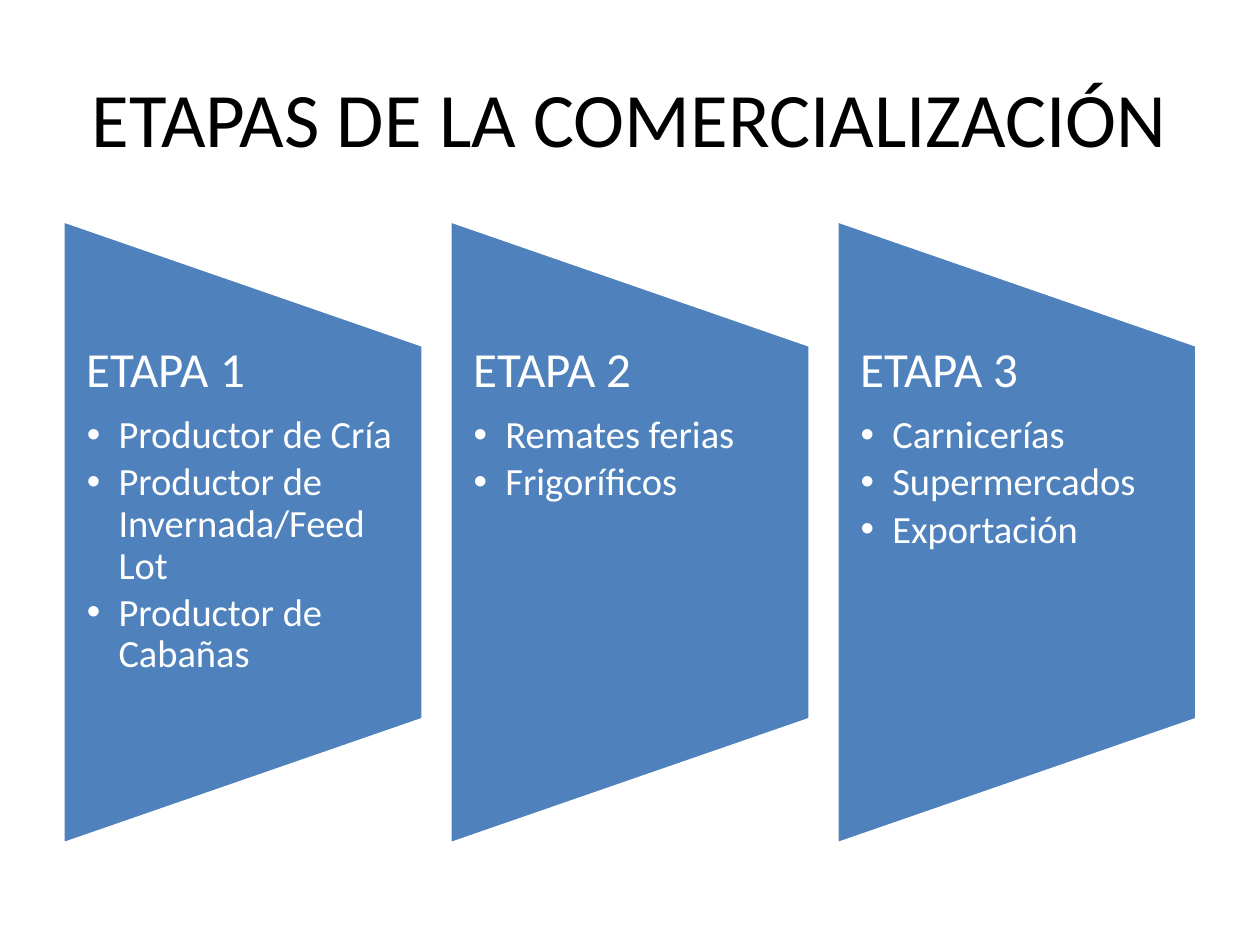
import dataclasses

import lxml.etree
import pptx
import pptx.dml.color
import pptx.enum.shapes
import pptx.enum.text
import pptx.oxml.ns
import pptx.util

Cm = pptx.util.Cm
Pt = pptx.util.Pt

FONT = "Calibri"
LEFT, CENTER_Y, PITCH = 1.27, 10.73, 7.8
PANEL_WIDTH, PANEL_HEIGHT, TEXT_HEIGHT = 7.26, 12.57, 7.54
INSET, INDENT = 0.48, 0.64


@dataclasses.dataclass
class Stage:
    heading: str
    items: list[str]


STAGES = [
    Stage("ETAPA 1", ["Productor de Cría", "Productor de Invernada/Feed Lot",
                      "Productor de Cabañas"]),
    Stage("ETAPA 2", ["Remates ferias", "Frigoríficos"]),
    Stage("ETAPA 3", ["Carnicerías", "Supermercados", "Exportación"]),
]


def rgb(value: str) -> pptx.dml.color.RGBColor:
    return pptx.dml.color.RGBColor.from_string(value)


def write(p, text: str, *, size: float, color: str = "FFFFFF",
          align=pptx.enum.text.PP_ALIGN.LEFT, spacing: float = 0.9,
          after: float = 0, bullet: bool = False) -> None:
    p.alignment = align
    p.line_spacing = spacing
    p.space_before = Pt(0)
    p.space_after = Pt(after)
    r = p.add_run()
    r.text = text
    r.font.name = FONT
    r.font.size = Pt(size)
    r.font.color.rgb = rgb(color)
    if bullet:
        p.level = 1
        pPr = p._p.get_or_add_pPr()
        pPr.set("marL", str(Cm(INDENT)))
        pPr.set("indent", str(-Cm(INDENT)))
        qn = pptx.oxml.ns.qn
        lxml.etree.SubElement(pPr, qn("a:buFont"), typeface="Arial")
        lxml.etree.SubElement(pPr, qn("a:buChar"), char="•")


def add_panel(s, left: float) -> None:
    sp = s.shapes.add_shape(
        pptx.enum.shapes.MSO_SHAPE.FLOWCHART_MANUAL_OPERATION,
        Cm(left + (PANEL_WIDTH - PANEL_HEIGHT) / 2),
        Cm(CENTER_Y - PANEL_WIDTH / 2), Cm(PANEL_HEIGHT), Cm(PANEL_WIDTH))
    sp.rotation = 270
    sp.shadow.inherit = False
    sp.fill.solid()
    sp.fill.fore_color.rgb = rgb("4F81BD")
    sp.line.color.rgb = rgb("FFFFFF")
    sp.line.width = Pt(2)


def add_stage(s, stage: Stage, left: float) -> None:
    add_panel(s, left)
    sp = s.shapes.add_textbox(Cm(left), Cm(CENTER_Y - TEXT_HEIGHT / 2),
                              Cm(PANEL_WIDTH), Cm(TEXT_HEIGHT))
    tf = sp.text_frame
    tf.word_wrap = True
    tf.margin_left = tf.margin_right = Cm(INSET)
    tf.margin_top = tf.margin_bottom = 0
    write(tf.paragraphs[0], stage.heading, size=28, after=9.8)
    for item in stage.items:
        write(tf.add_paragraph(), item, size=22, after=3.3, bullet=True)


def main() -> None:
    prs = pptx.Presentation()
    prs.slide_width, prs.slide_height = Cm(25.4), Cm(19.05)
    s = prs.slides.add_slide(prs.slide_layouts[5])

    title = s.shapes.title
    title.left, title.top = Cm(LEFT), Cm(0.76)
    title.width, title.height = Cm(22.86), Cm(3.18)
    tf = title.text_frame
    tf.vertical_anchor = pptx.enum.text.MSO_ANCHOR.MIDDLE
    write(tf.paragraphs[0], "ETAPAS DE LA COMERCIALIZACIÓN", size=44,
          color="000000", align=pptx.enum.text.PP_ALIGN.CENTER, spacing=1.0)

    for i, stage in enumerate(STAGES):
        add_stage(s, stage, LEFT + i * PITCH)

    prs.save("out.pptx")


if __name__ == "__main__":
    main()
